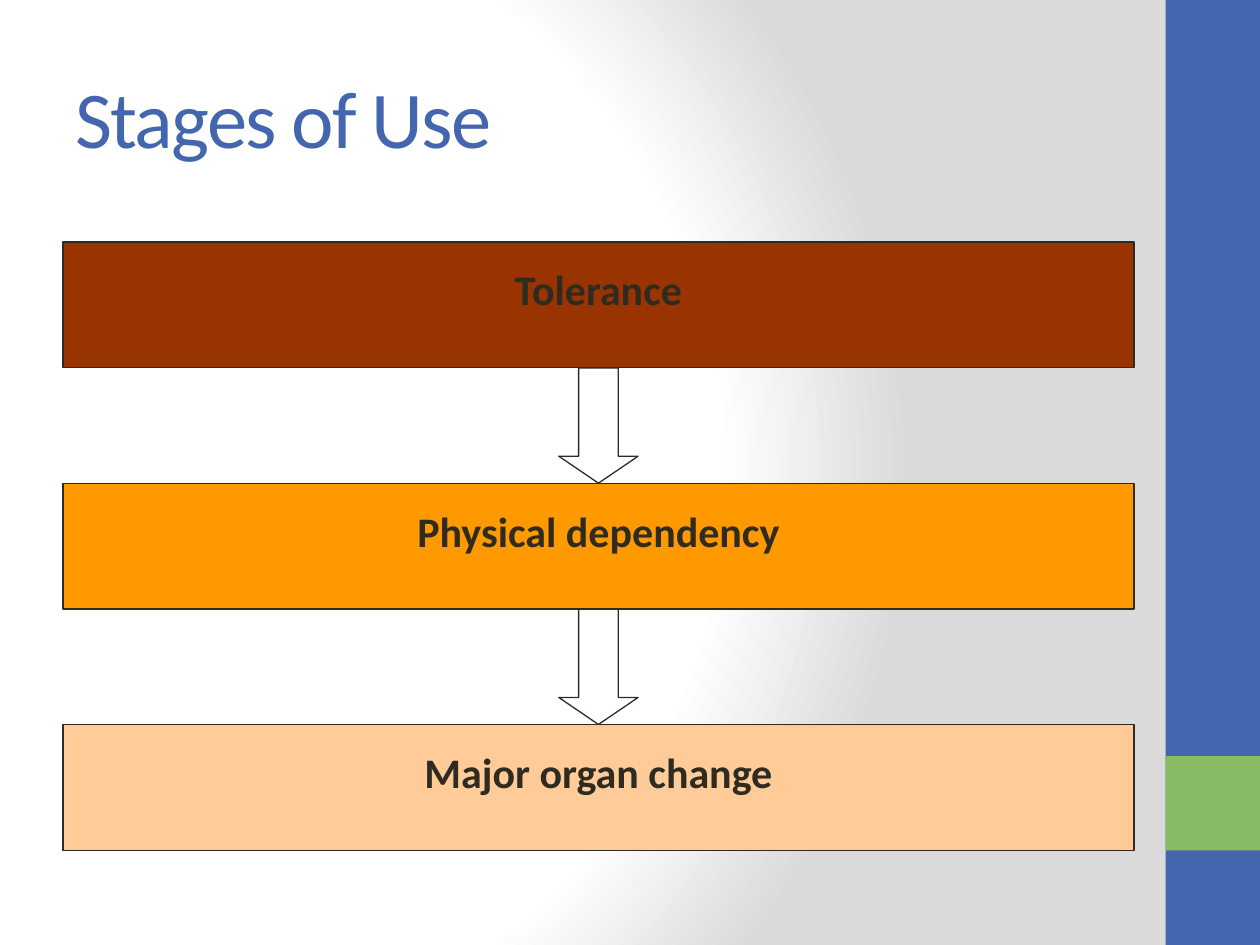
from dataclasses import dataclass

from lxml.etree import SubElement
from pptx import Presentation
from pptx.dml.color import RGBColor
from pptx.enum.shapes import MSO_SHAPE as Shape
from pptx.enum.text import MSO_ANCHOR as Anchor, PP_ALIGN as Align
from pptx.oxml.ns import qn
from pptx.util import Inches, Pt


@dataclass(frozen=True)
class Theme:
    font: str = "Calibri"
    title_size: int = 46
    stage_size: int = 24
    line_width: float = 0.75
    blue: str = "4466AF"
    green: str = "88BC64"
    ink: str = "2F2B20"
    white: str = "FFFFFF"
    grey: str = "DADADA"


THEME = Theme()
TITLE = "Stages of Use"
STAGES = [
    ("Tolerance", "993300"),
    ("Physical dependency", "FF9900"),
    ("Major organ change", "FFCC99"),
]
SIDE_BANDS = [  # top, height, colour
    (0, 7.5, THEME.blue),
    (6, 0.75, THEME.green),
]
BACKGROUND_STOPS = [(0, THEME.white), (75, THEME.white), (100, THEME.grey)]
BACKGROUND_FOCUS = {"l": 20, "t": 50, "r": 100, "b": 50}

BAND_LEFT, BAND_WIDTH = 9.25, 0.75
STAGE_LEFT, STAGE_WIDTH, STAGE_HEIGHT = 0.5, 8.5, 1
FIRST_STAGE_TOP, ARROW_WIDTH, ARROW_HEIGHT = 1.92, 0.63, 0.915


def paint_background(slide):
    """Fill the slide with a circular gradient, which python-pptx cannot set."""
    fill = slide.background.fill
    fill.solid()
    properties = slide.element.cSld.find(qn("p:bg")).find(qn("p:bgPr"))
    properties.remove(properties.find(qn("a:solidFill")))
    gradient = SubElement(properties, qn("a:gradFill"), rotWithShape="1")
    properties.insert(0, gradient)
    stops = SubElement(gradient, qn("a:gsLst"))
    for percent, colour in BACKGROUND_STOPS:
        stop = SubElement(stops, qn("a:gs"), pos=str(percent * 1000))
        SubElement(stop, qn("a:srgbClr"), val=colour)
    circle = SubElement(gradient, qn("a:path"), {"path": "circle"})
    focus = {side: str(percent * 1000) for side, percent in BACKGROUND_FOCUS.items()}
    SubElement(circle, qn("a:fillToRect"), focus)


def add_block(slide, preset, left, top, width, height, colour, outlined=True):
    block = slide.shapes.add_shape(
        preset, Inches(left), Inches(top), Inches(width), Inches(height))
    block.shadow.inherit = False
    block.fill.solid()
    block.fill.fore_color.rgb = RGBColor.from_string(colour)
    if outlined:
        block.line.color.rgb = RGBColor.from_string(THEME.ink)
        block.line.width = Pt(THEME.line_width)
    else:
        block.line.fill.background()
    return block


def write(frame, text, size, colour, align, bold=False):
    frame.text = text
    frame.vertical_anchor = Anchor.MIDDLE
    paragraph = frame.paragraphs[0]
    paragraph.alignment = align
    run = paragraph.runs[0]
    run.font.name = THEME.font
    run.font.size = Pt(size)
    run.font.bold = bold
    run.font.color.rgb = RGBColor.from_string(colour)
    return run


def add_title(slide):
    box = slide.shapes.add_textbox(Inches(0.5), Inches(0.3), Inches(8.33), Inches(1.25))
    box.text_frame.word_wrap = True
    run = write(box.text_frame, TITLE, THEME.title_size, THEME.blue, Align.LEFT)
    run.font._element.set("spc", "-100")


def add_stages(slide):
    """Stack the stages, with an arrow filling the gap between each pair."""
    tops = [FIRST_STAGE_TOP + i * (STAGE_HEIGHT + ARROW_HEIGHT) for i in range(len(STAGES))]
    for (name, colour), top in zip(STAGES, tops):
        stage = add_block(slide, Shape.RECTANGLE, STAGE_LEFT, top,
                          STAGE_WIDTH, STAGE_HEIGHT, colour)
        frame = stage.text_frame
        frame.word_wrap = False
        frame.margin_bottom = Inches(0.3)  # lifts the label above the middle
        write(frame, name, THEME.stage_size, THEME.ink, Align.CENTER, bold=True)

    arrow_left = STAGE_LEFT + (STAGE_WIDTH - ARROW_WIDTH) / 2
    for top in tops[:-1]:
        arrow = add_block(slide, Shape.DOWN_ARROW, arrow_left, top + STAGE_HEIGHT,
                          ARROW_WIDTH, ARROW_HEIGHT, THEME.white)
        arrow.adjustments[0] = 0.5
        arrow.adjustments[1] = 0.34


def main():
    deck = Presentation()
    deck.slide_width, deck.slide_height = Inches(10), Inches(7.5)
    slide = deck.slides.add_slide(deck.slide_layouts[6])
    paint_background(slide)
    for top, height, colour in SIDE_BANDS:
        add_block(slide, Shape.RECTANGLE, BAND_LEFT, top, BAND_WIDTH, height,
                  colour, outlined=False)
    add_stages(slide)
    add_title(slide)
    deck.save("out.pptx")


if __name__ == "__main__":
    main()
